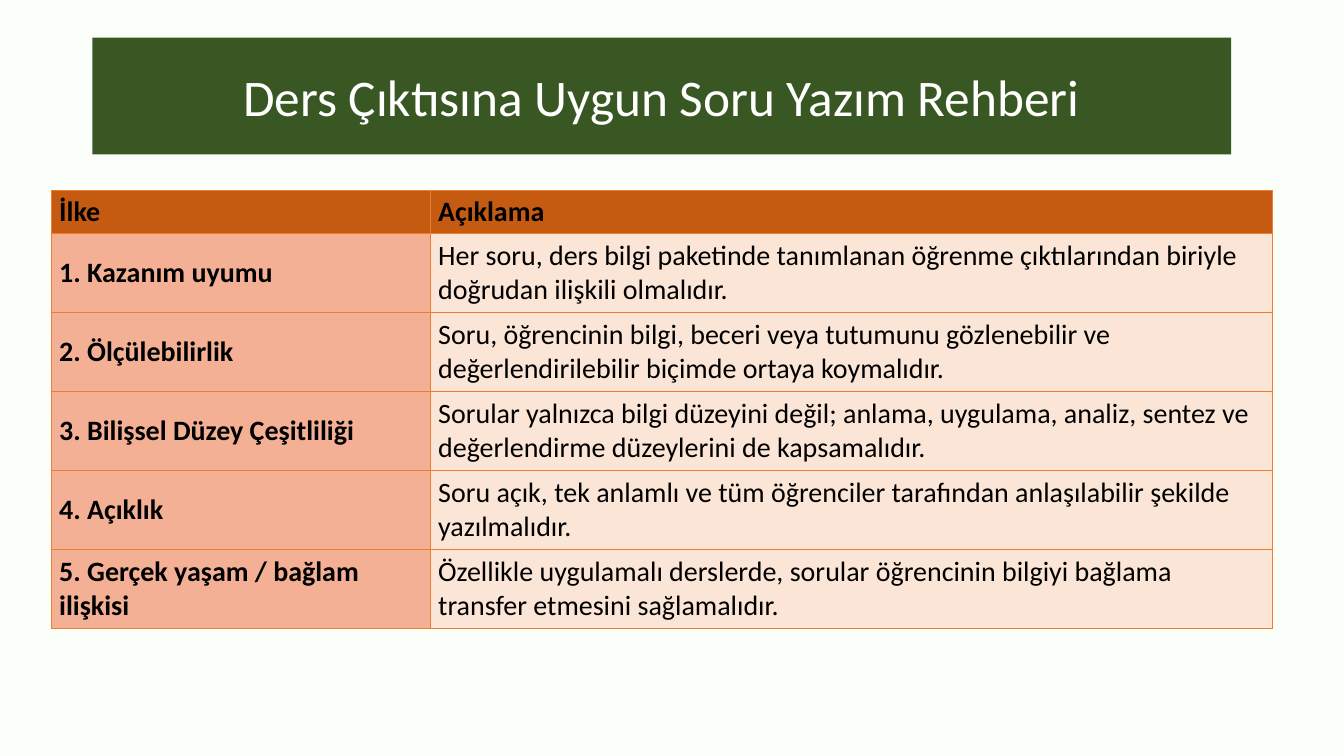
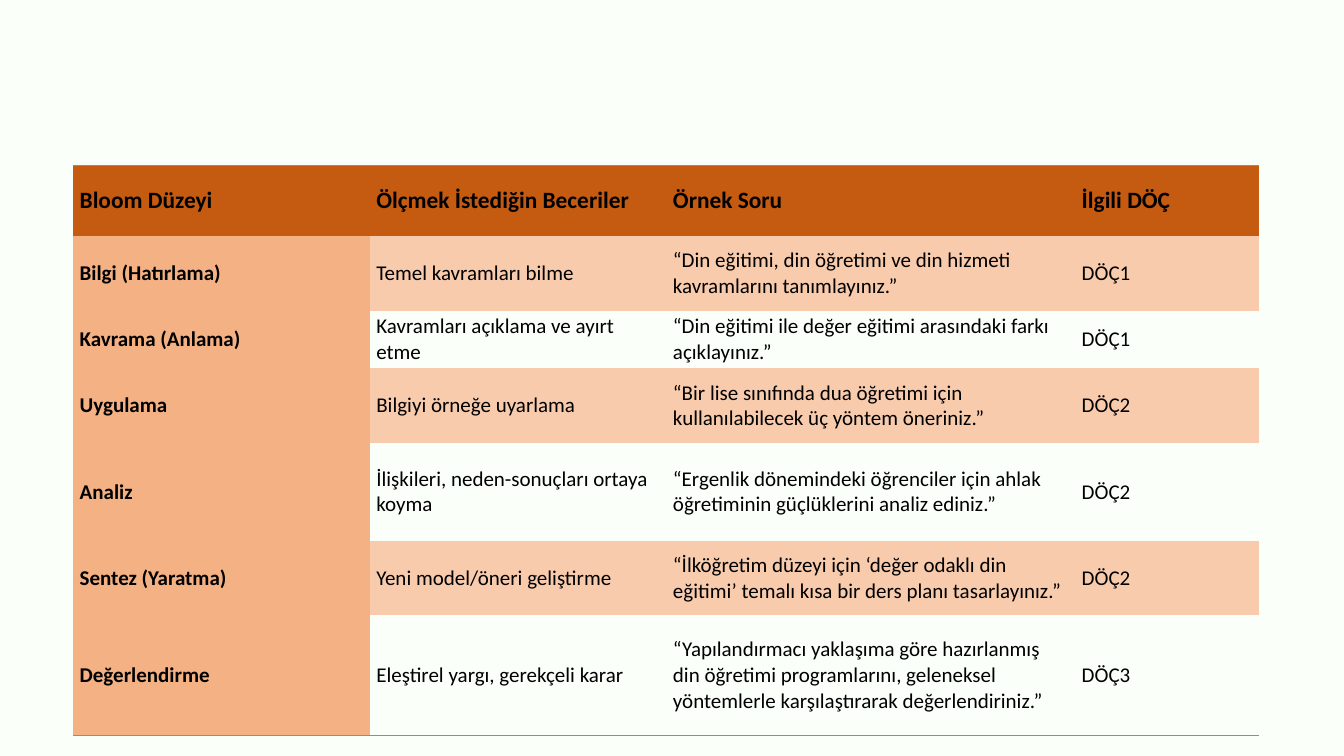
from dataclasses import dataclass

from lxml import etree
from pptx import Presentation
from pptx.dml.color import RGBColor as Rgb
from pptx.enum.text import MSO_ANCHOR as Anchor, PP_ALIGN as Align
from pptx.oxml.ns import qn
from pptx.util import Cm, Pt

PLAIN = "{2D5ABB26-0587-4C30-8999-92F81FD0307C}"  # table style without fill or grid
TITLED, BLANK = 5, 6


@dataclass(frozen=True)
class Theme:
    font: str = "Calibri"
    page: str = "FAFFFA"
    band: str = "385723"
    light: str = "FFFFFF"
    ink: str = "000000"
    head: str = "C55A11"
    salmon: str = "F4B095"
    cream: str = "FBE5D6"
    amber: str = "F4B183"
    peach: str = "F8CBAD"
    grid: str = "ED7D31"
    rule: str = "5B9BD5"
    title: int = 44
    large: int = 24
    mid: int = 20
    small: int = 18


def text(frame, words, *, font, size, color, bold=False, align=Align.LEFT):
    frame.text = words
    par = frame.paragraphs[0]
    par.alignment = align
    face = par.font
    face.name, face.size, face.bold = font, Pt(size), bold
    face.color.rgb = Rgb.from_string(color)


def edge(cell, sides, color, width):
    """Draw borders on the given sides, a string of letters in the order L, R, T, B."""
    props = cell._tc.get_or_add_tcPr()
    for side in sides:
        line = etree.SubElement(props, qn(f"a:ln{side}"), w=str(Pt(width)))
        fill = etree.SubElement(line, qn("a:solidFill"))
        etree.SubElement(fill, qn("a:srgbClr"), val=color)


class Deck:
    def __init__(self, theme):
        self.theme = theme
        self.prs = Presentation()
        self.prs.slide_width, self.prs.slide_height = Cm(40.64), Cm(22.86)
        self.paint(self.prs.slide_master.background.fill, theme.page)
        self.slide = None

    def paint(self, fill, color):
        if color:
            fill.solid()
            fill.fore_color.rgb = Rgb.from_string(color)
        else:
            fill.background()

    def add(self, layout):
        self.slide = self.prs.slides.add_slide(self.prs.slide_layouts[layout])

    def title(self, words):
        box = self.slide.shapes.title
        box.left, box.top, box.width, box.height = Cm(2.79), Cm(1.14), Cm(34.44), Cm(3.53)
        self.paint(box.fill, self.theme.band)
        box.text_frame.vertical_anchor = Anchor.MIDDLE
        text(box.text_frame, words, font=self.theme.font, size=self.theme.title,
             color=self.theme.light, align=Align.CENTER)

    def table(self, left, top, cols, rows, data, *, sizes, side, bands, pad, lines):
        """Sizes are for head and body, bands fill the body rows in turn,
        and lines gives (sides, color, width) for a row number."""
        frame = self.slide.shapes.add_table(len(rows), len(cols), Cm(left), Cm(top),
                                            Cm(sum(cols)), Cm(sum(rows)))
        grid = frame.table
        grid._tbl.tblPr.find(qn("a:tableStyleId")).text = PLAIN
        for col, width in zip(grid.columns, cols):
            col.width = Cm(width)
        for r, (row, height, line) in enumerate(zip(grid.rows, rows, data)):
            row.height = Cm(height)
            for c, (cell, words) in enumerate(zip(row.cells, line)):
                cell.vertical_anchor = Anchor.MIDDLE
                cell.margin_left = cell.margin_right = Cm(pad)
                cell.margin_top = cell.margin_bottom = Cm(pad / 2)
                edge(cell, *lines(r))
                body = side if c == 0 else bands[(r - 1) % len(bands)]
                self.paint(cell.fill, self.theme.head if r == 0 else body)
                text(cell.text_frame, words, font=self.theme.font,
                     size=sizes[r > 0], color=self.theme.ink, bold=r == 0 or c == 0)


GUIDE = [
    ("İlke", "Açıklama"),
    ("1. Kazanım uyumu", "Her soru, ders bilgi paketinde tanımlanan öğrenme "
     "çıktılarından biriyle doğrudan ilişkili olmalıdır."),
    ("2. Ölçülebilirlik", "Soru, öğrencinin bilgi, beceri veya tutumunu gözlenebilir ve "
     "değerlendirilebilir biçimde ortaya koymalıdır."),
    ("3. Bilişsel Düzey Çeşitliliği", "Sorular yalnızca bilgi düzeyini değil; anlama, "
     "uygulama, analiz, sentez ve değerlendirme düzeylerini de kapsamalıdır."),
    ("4. Açıklık", "Soru açık, tek anlamlı ve tüm öğrenciler tarafından anlaşılabilir "
     "şekilde yazılmalıdır."),
    ("5. Gerçek yaşam / bağlam ilişkisi", "Özellikle uygulamalı derslerde, sorular "
     "öğrencinin bilgiyi bağlama transfer etmesini sağlamalıdır."),
]

BLOOM = [
    ("Bloom Düzeyi", "Ölçmek İstediğin Beceriler", "Örnek Soru", "İlgili DÖÇ"),
    ("Bilgi (Hatırlama)", "Temel kavramları bilme",
     "“Din eğitimi, din öğretimi ve din hizmeti kavramlarını tanımlayınız.”", "DÖÇ1"),
    ("Kavrama (Anlama)", "Kavramları açıklama ve ayırt etme",
     "“Din eğitimi ile değer eğitimi arasındaki farkı açıklayınız.”", "DÖÇ1"),
    ("Uygulama", "Bilgiyi örneğe uyarlama",
     "“Bir lise sınıfında dua öğretimi için kullanılabilecek üç yöntem öneriniz.”", "DÖÇ2"),
    ("Analiz", "İlişkileri, neden-sonuçları ortaya koyma",
     "“Ergenlik dönemindeki öğrenciler için ahlak öğretiminin güçlüklerini analiz ediniz.”",
     "DÖÇ2"),
    ("Sentez (Yaratma)", "Yeni model/öneri geliştirme",
     "“İlköğretim düzeyi için ‘değer odaklı din eğitimi’ temalı kısa bir ders planı "
     "tasarlayınız.”", "DÖÇ2"),
    ("Değerlendirme", "Eleştirel yargı, gerekçeli karar",
     "“Yapılandırmacı yaklaşıma göre hazırlanmış din öğretimi programlarını, geleneksel "
     "yöntemlerle karşılaştırarak değerlendiriniz.”", "DÖÇ3"),
]


def main():
    theme = Theme()
    deck = Deck(theme)

    deck.add(TITLED)
    deck.title("Ders Çıktısına Uygun Soru Yazım Rehberi")
    deck.table(1.54, 5.74, [11.46, 25.48], [1.32] + [2.39] * 5, GUIDE,
               sizes=(theme.large, theme.large), side=theme.salmon,
               bands=[theme.cream], pad=0.25,
               lines=lambda r: ("LRTB", theme.grid, 0.5))

    deck.add(BLANK)
    ends = {0: "T", len(BLOOM) - 1: "B"}
    deck.table(2.21, 5, [8.97, 8.97, 12.36, 5.56],
               [2.13, 2.26, 1.6, 2.26, 2.95, 2.26, 3.63], BLOOM,
               sizes=(theme.mid, theme.small), side=theme.amber,
               bands=[theme.peach, None], pad=0.2,
               lines=lambda r: (ends.get(r, ""), theme.rule, 1))

    deck.prs.save("out.pptx")


if __name__ == "__main__":
    main()
